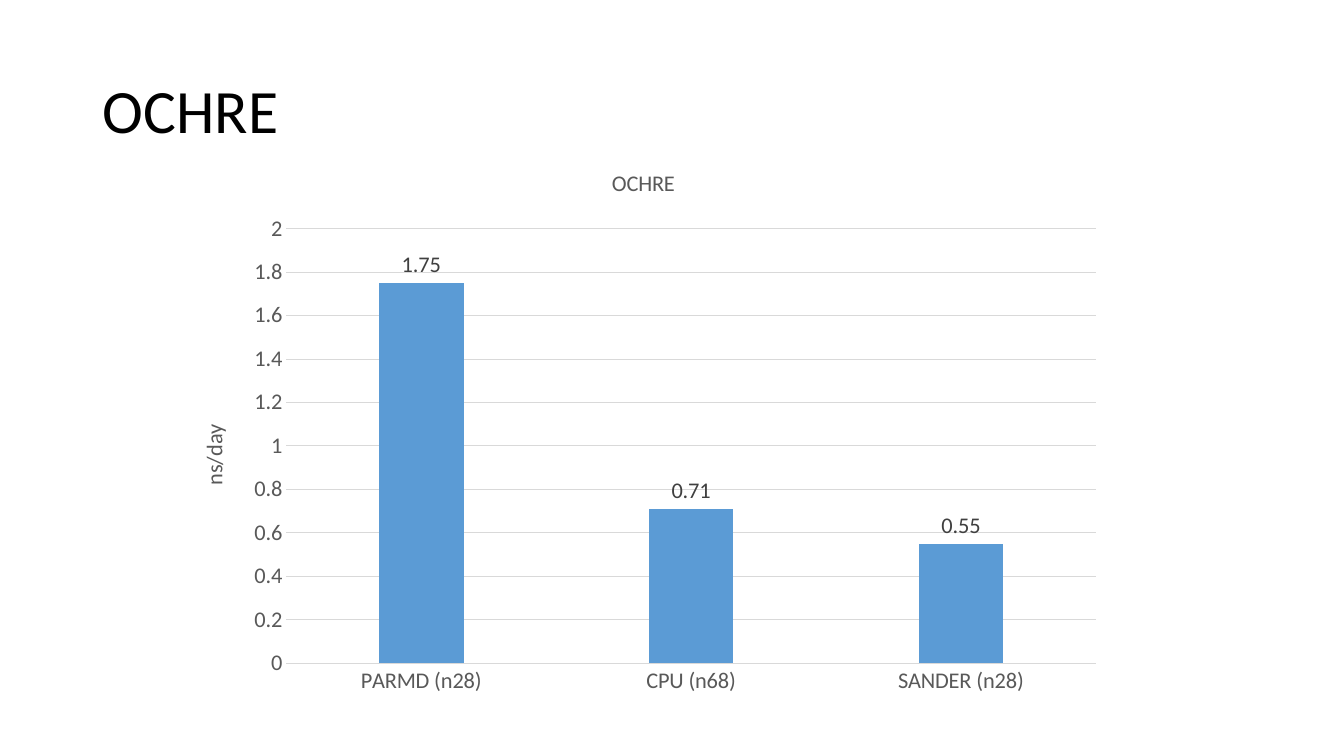
from lxml import etree
from pptx import Presentation
from pptx.chart.data import CategoryChartData
from pptx.dml.color import RGBColor
from pptx.enum.chart import XL_CHART_TYPE, XL_LABEL_POSITION, XL_TICK_MARK
from pptx.enum.text import MSO_ANCHOR
from pptx.oxml.ns import qn
from pptx.util import Inches, Pt

COLUMNS = XL_CHART_TYPE.COLUMN_CLUSTERED
OUTSIDE_END = XL_LABEL_POSITION.OUTSIDE_END
NO_TICK = XL_TICK_MARK.NONE
MIDDLE = MSO_ANCHOR.MIDDLE

HEADING = "OCHRE"
CHART_TITLE = "OCHRE"
VALUE_TITLE = "ns/day"
SPEEDS = {"PARMD (n28)": 1.75, "CPU (n68)": 0.71, "SANDER (n28)": 0.55}

THEME = {
    "font": "Calibri", "heading_size": 44, "chart_size": 16,
    "heading": "000000", "text": "595959", "label": "404040",
    "line": "D9D9D9", "bar": "5B9BD5",
}

# Slide positions in inches: left, top, width, height
HEADING_BOX = (0.92, 0.4, 11.5, 1.45)
CHART_BOX = (1.75, 1.46, 9.3, 5.54)
PLOT_BOX = (2.84, 2.27, 8.03, 4.31)
CHART_TITLE_AT = (6.03, 1.62)
VALUE_TITLE_AT = (1.93, 4.17)


def color(name):
    return RGBColor.from_string(THEME[name])


def set_values(target, values):
    for key, value in values.items():
        setattr(target, key, value)


def style_font(font, size, color_name):
    set_values(font, {"name": THEME["font"], "size": Pt(THEME[size]), "bold": False})
    font.color.rgb = color(color_name)


def style_line(line):
    line.color.rgb = color("line")
    line.width = Pt(0.75)


def place(element, position, inner=False):
    """Fix a chart part at a slide position, stored as fractions of the chart."""
    for old in element.findall(qn("c:layout")):
        element.remove(old)
    layout = etree.Element(qn("c:layout"))
    manual = etree.SubElement(layout, qn("c:manualLayout"))
    left, top, width, height = CHART_BOX
    fractions = [(position[0] - left) / width, (position[1] - top) / height]
    fractions += [size / whole for size, whole in zip(position[2:], (width, height))]
    settings = [("layoutTarget", "inner")] if inner else []
    settings += [("xMode", "edge"), ("yMode", "edge")]
    settings += [(key, f"{value:.4f}") for key, value in zip("xywh", fractions)]
    for tag, value in settings:
        etree.SubElement(manual, qn(f"c:{tag}")).set("val", value)
    text = element.find(qn("c:tx"))
    element.insert(0 if text is None else 1, layout)


def fill_title(title, text, position):
    para = title.text_frame.paragraphs[0]
    span = para.add_run()
    span.text = text
    style_font(span.font, "chart_size", "text")
    place(next(para._p.iterancestors(qn("c:title"))), position)


def add_heading(page):
    box = page.shapes.add_textbox(*map(Inches, HEADING_BOX))
    set_values(box.text_frame, {"word_wrap": True, "vertical_anchor": MIDDLE})
    para = box.text_frame.paragraphs[0]
    para.line_spacing = 0.9
    span = para.add_run()
    span.text = HEADING
    style_font(span.font, "heading_size", "heading")


def style_axes(chart):
    categories, values = chart.category_axis, chart.value_axis
    for axis in (categories, values):
        set_values(axis, {"major_tick_mark": NO_TICK, "minor_tick_mark": NO_TICK})
        style_font(axis.tick_labels.font, "chart_size", "text")
    style_line(categories.format.line)
    set_values(values, {"minimum_scale": 0, "maximum_scale": 2, "major_unit": 0.2})
    values.format.line.fill.background()
    style_line(values.major_gridlines.format.line)
    fill_title(values.axis_title, VALUE_TITLE, VALUE_TITLE_AT)
    body = values.axis_title.text_frame._txBody.find(qn("a:bodyPr"))
    body.set("rot", "-5400000")
    body.set("vert", "horz")


def style_bars(plot):
    set_values(plot, {"gap_width": 219, "overlap": -27, "vary_by_categories": False})
    bars = plot.series[0]
    bars.format.fill.solid()
    bars.format.fill.fore_color.rgb = color("bar")
    set_values(bars.data_labels, {"show_value": True, "position": OUTSIDE_END})
    style_font(bars.data_labels.font, "chart_size", "label")


def add_speed_chart(page):
    data = CategoryChartData()
    data.categories = list(SPEEDS)
    data.add_series("Series 1", list(SPEEDS.values()))
    chart = page.shapes.add_chart(COLUMNS, *map(Inches, CHART_BOX), data).chart
    style_font(chart.font, "chart_size", "text")
    chart.has_legend = False
    fill_title(chart.chart_title, CHART_TITLE, CHART_TITLE_AT)
    style_axes(chart)
    style_bars(chart.plots[0])
    place(next(chart._chartSpace.iter(qn("c:plotArea"))), PLOT_BOX, inner=True)


def main():
    deck = Presentation()
    deck.slide_width, deck.slide_height = Inches(13.33), Inches(7.5)
    page = deck.slides.add_slide(deck.slide_layouts[6])
    add_heading(page)
    add_speed_chart(page)
    deck.save("out.pptx")


if __name__ == "__main__":
    main()
